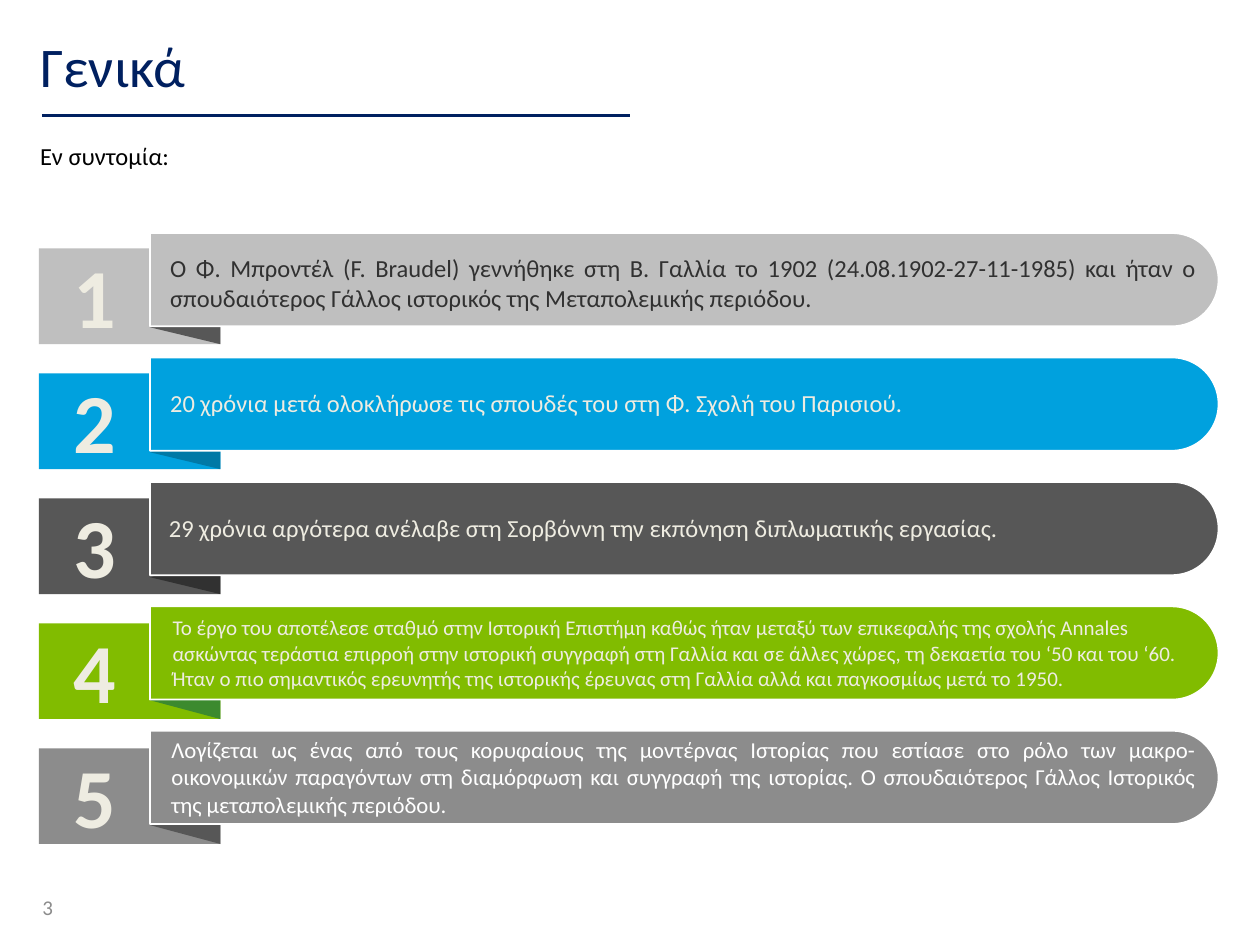
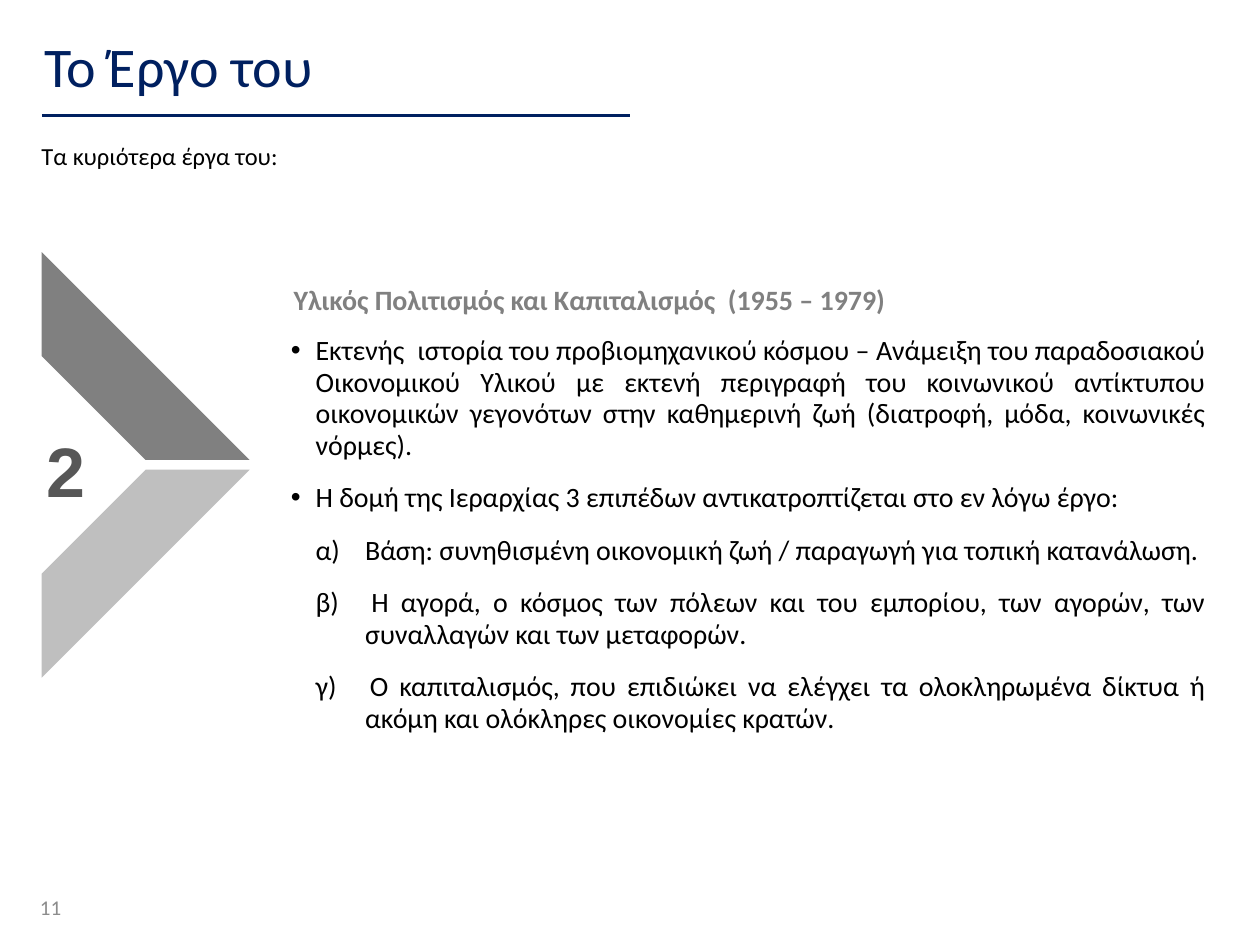
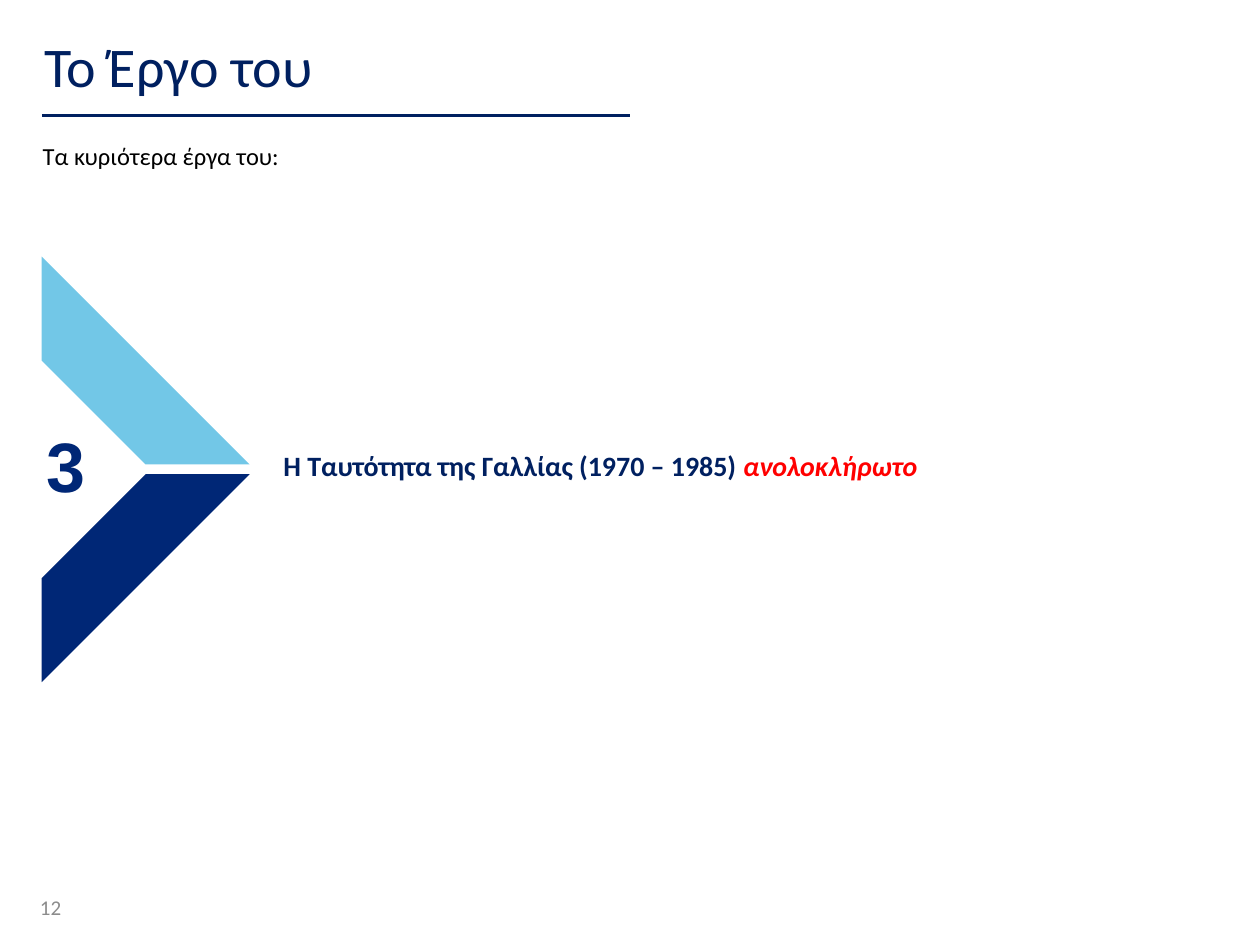
from dataclasses import dataclass

import lxml.etree
import pptx
import pptx.dml.color
import pptx.enum.shapes
import pptx.enum.text
import pptx.oxml.ns
import pptx.util

Pt = pptx.util.Pt
qn = pptx.oxml.ns.qn
SHAPE = pptx.enum.shapes.MSO_SHAPE
ALIGN = pptx.enum.text.PP_ALIGN
ANCHOR = pptx.enum.text.MSO_ANCHOR

FONT = "Calibri"
NAVY = "002060"
BLACK = "000000"
WHITE = "FFFFFF"
CREAM = "EEECE1"
CHARCOAL = "313131"
DARK_GRAY = "575757"
MID_GRAY = "808080"
SOFT_GRAY = "8C8C8C"
LIGHT_GRAY = "BFBFBF"
RED = "FF0000"

ROW_COUNT_TOP = 142
TAB_PITCH = 71.4
TAB_LEFT, TAB_W, TAB_H = 22.3, 103.7, 54.7
BAR_TOP, BAR_PITCH = 133.2, 71.1
BAR_LEFT, BAR_W, BAR_H = 85.7, 610.6, 53.3
FOLD_W = 40.3


@dataclass(frozen=True)
class Box:
    left: float
    top: float
    width: float
    height: float

    def emu(self) -> tuple:
        return tuple(Pt(v) for v in (self.left, self.top, self.width, self.height))

    def turned(self) -> "Box":
        """Frame that covers this box after a quarter turn."""
        shift = (self.width - self.height) / 2
        return Box(self.left + shift, self.top - shift, self.height, self.width)


@dataclass(frozen=True)
class Style:
    size: float
    color: str
    bold: bool = False
    italic: bool = False
    font: str = FONT


@dataclass(frozen=True)
class Fact:
    """One numbered ribbon; text_box is where its words stand."""
    text: str
    fill: str
    fold: str
    fold_h: float
    text_box: Box
    style: Style
    align: ALIGN = ALIGN.LEFT


@dataclass(frozen=True)
class Work:
    """The large arrow and number that introduce a book."""
    number: str
    top: float
    number_top: float
    upper: str
    lower: str
    number_color: str


@dataclass(frozen=True)
class Item:
    text: str
    margin: float
    hanging: float
    bullet: str = ""


BODY = Style(14, BLACK)
PAGE = Style(12, SOFT_GRAY)
LIST = Style(16, BLACK)

FACTS = [
    Fact("Ο Φ. Μπροντέλ (F. Braudel) γεννήθηκε στη Β. Γαλλία το 1902 "
         "(24.08.1902-27-11-1985) και ήταν ο σπουδαιότερος Γάλλος ιστορικός "
         "της Μεταπολεμικής περιόδου.",
         LIGHT_GRAY, DARK_GRAY, 19.4, Box(97.2, 144.7, 586.8, 34),
         Style(14, CHARCOAL), ALIGN.JUSTIFY),
    Fact("20 χρόνια μετά ολοκλήρωσε τις σπουδές του στη Φ. Σχολή του Παρισιού.",
         "00A1DE", "0079A6", 19.4, Box(97.2, 221.8, 500.4, 17), Style(14, CREAM)),
    Fact("29 χρόνια αργότερα ανέλαβε στη Σορβόννη την εκπόνηση διπλωματικής εργασίας.",
         DARK_GRAY, CHARCOAL, 19.4, Box(96.5, 293, 500.4, 17), Style(14, CREAM)),
    Fact("Το έργο του αποτέλεσε σταθμό στην Ιστορική Επιστήμη καθώς ήταν μεταξύ των "
         "επικεφαλής της σχολής Annales ασκώντας τεράστια επιρροή στην ιστορική "
         "συγγραφή στη Γαλλία και σε άλλες χώρες, τη δεκαετία του ‘50 και του ‘60. "
         "Ήταν ο πιο σημαντικός ερευνητής της ιστορικής έρευνας στη Γαλλία αλλά και "
         "παγκοσμίως μετά το 1950.",
         "81BC00", "3C8A2E", 21.6, Box(98.6, 351.4, 583, 44), Style(12, CREAM)),
    Fact("Λογίζεται ως ένας από τους κορυφαίους της μοντέρνας Ιστορίας που εστίασε στο "
         "ρόλο των μακρο- οικονομικών παραγόντων στη διαμόρφωση και συγγραφή της "
         "ιστορίας. Ο σπουδαιότερος Γάλλος Ιστορικός της μεταπολεμικής περιόδου.",
         SOFT_GRAY, DARK_GRAY, 21.6, Box(97.9, 420.5, 584.6, 47.5),
         Style(13, WHITE), ALIGN.JUSTIFY),
]

DETAILS = [
    Item("Εκτενής  ιστορία του προβιομηχανικού κόσμου – Ανάμειξη του παραδοσιακού "
         "Οικονομικού Υλικού με εκτενή περιγραφή του κοινωνικού αντίκτυπου οικονομικών "
         "γεγονότων στην καθημερινή ζωή (διατροφή, μόδα, κοινωνικές νόρμες).",
         14.2, 14.2, "•"),
    Item("Η δομή της Ιεραρχίας 3 επιπέδων αντικατροπτίζεται στο εν λόγω έργο:",
         14.2, 14.2, "•"),
    Item("α) \tΒάση: συνηθισμένη οικονομική ζωή / παραγωγή για τοπική κατανάλωση.",
         42.5, 28.3),
    Item("β) \tΗ αγορά, ο κόσμος των πόλεων και του εμπορίου, των αγορών, των "
         "συναλλαγών και των μεταφορών.", 42.5, 28.3),
    Item("γ) \tΟ καπιταλισμός, που επιδιώκει να ελέγχει τα ολοκληρωμένα δίκτυα ή "
         "ακόμη και ολόκληρες οικονομίες κρατών.", 42.5, 28.3),
]


def rgb(color: str):
    return pptx.dml.color.RGBColor.from_string(color)


def format_font(font, style: Style) -> None:
    font.name = style.font
    font.size = Pt(style.size)
    font.bold = style.bold
    font.italic = style.italic
    font.color.rgb = rgb(style.color)


def set_frame(tf, inset: float | None) -> None:
    """Wrap the text; None keeps the usual insets."""
    tf.word_wrap = True
    tf.auto_size = pptx.enum.text.MSO_AUTO_SIZE.NONE
    if inset is not None:
        tf.margin_left = tf.margin_right = tf.margin_top = tf.margin_bottom = Pt(inset)


def add_text(s, box: Box, text: str, style: Style, align=ALIGN.LEFT,
             inset: float | None = 0):
    tf = s.shapes.add_textbox(*box.emu()).text_frame
    set_frame(tf, inset)
    tf.text = text
    p = tf.paragraphs[0]
    p.alignment = align
    format_font(p.runs[0].font, style)
    return tf


def add_filled(s, kind, box: Box, fill: str, rotation: float = 0, line: str = ""):
    sp = s.shapes.add_shape(kind, *box.emu())
    sp.rotation = rotation
    sp.shadow.inherit = False
    sp.fill.solid()
    sp.fill.fore_color.rgb = rgb(fill)
    if line:
        sp.line.color.rgb = rgb(line)
        sp.line.width = Pt(1)
    else:
        sp.line.fill.background()
    return sp


def add_page(prs, title: str, title_left: float, intro: str, intro_left: float,
             page: str, page_w: float, page_align=ALIGN.LEFT):
    """Slide with its title, rule, introduction line and page number."""
    s = prs.slides.add_slide(prs.slide_layouts[5])
    sp = s.shapes.title
    sp.left, sp.top, sp.width, sp.height = Box(title_left, 18, 648, 38.2).emu()
    tf = sp.text_frame
    set_frame(tf, None)
    tf.vertical_anchor = ANCHOR.MIDDLE
    tf.text = title
    tf.paragraphs[0].alignment = ALIGN.LEFT
    format_font(tf.paragraphs[0].runs[0].font, Style(32, NAVY))

    rule = s.shapes.add_connector(pptx.enum.shapes.MSO_CONNECTOR.STRAIGHT,
                                  Pt(24), Pt(66), Pt(360), Pt(66))
    rule.line.color.rgb = rgb(NAVY)
    rule.line.width = Pt(2)
    lxml.etree.SubElement(rule._element.spPr, qn("a:effectLst"))

    tf = add_text(s, Box(intro_left, 77.8, 680, 24), intro, BODY, ALIGN.JUSTIFY, None)
    tf.paragraphs[0].line_spacing = Pt(16)
    tf = add_text(s, Box(15.8, 507.4, page_w, 22), page, PAGE, page_align, None)
    tf.vertical_anchor = ANCHOR.MIDDLE
    return s


def add_fact(s, index: int, fact: Fact) -> None:
    tab_top = ROW_COUNT_TOP + index * TAB_PITCH
    add_filled(s, SHAPE.RECTANGLE, Box(TAB_LEFT, tab_top, TAB_W, TAB_H), fact.fill)
    fold = Box(TAB_LEFT + TAB_W - FOLD_W, tab_top + TAB_H - fact.fold_h,
               FOLD_W, fact.fold_h)
    add_filled(s, SHAPE.ISOSCELES_TRIANGLE, fold.turned(), fact.fold, 270)
    bar = Box(BAR_LEFT, BAR_TOP + index * BAR_PITCH, BAR_W, BAR_H)
    sp = add_filled(s, SHAPE.ROUND_2_SAME_RECTANGLE, bar.turned(), fact.fill, 90, WHITE)
    sp.adjustments[0] = 0.5
    sp.adjustments[1] = 0
    add_text(s, Box(26.6, tab_top - 5.2, 54.7, 64), str(index + 1),
             Style(48, CREAM, bold=True), ALIGN.CENTER, 2.9)
    add_text(s, fact.text_box, fact.text, fact.style, fact.align)


def add_work(s, work: Work) -> None:
    side, pitch = 118.8, 124.4
    for i, (fill, turn) in enumerate([(work.upper, 270), (work.lower, 0)]):
        box = Box(23.8, work.top + i * pitch, side, side)
        add_filled(s, SHAPE.DIAGONAL_STRIPE, box, fill, turn)
    add_text(s, Box(23.8, work.number_top, 30.2, 54), work.number,
             Style(40, work.number_color, bold=True, font="Arial"), inset=2.9)


def add_list(s, box: Box, items: list[Item]) -> None:
    tf = s.shapes.add_textbox(*box.emu()).text_frame
    set_frame(tf, None)
    for i, item in enumerate(items):
        p = tf.add_paragraph() if i else tf.paragraphs[0]
        p.text = item.text
        p.alignment = ALIGN.JUSTIFY
        p.line_spacing = Pt(18)
        if i:
            p.space_before = Pt(12)
        pPr = p._p.get_or_add_pPr()
        pPr.set("marL", str(Pt(item.margin)))
        pPr.set("indent", str(-Pt(item.hanging)))
        if item.bullet:
            lxml.etree.SubElement(pPr, qn("a:buFont"), typeface="Arial")
            lxml.etree.SubElement(pPr, qn("a:buChar"), char=item.bullet)
        for r in p.runs:
            format_font(r.font, LIST)


def main() -> None:
    prs = pptx.Presentation()
    prs.slide_width, prs.slide_height = Pt(720), Pt(540)

    s = add_page(prs, "Γενικά", 15.8, "Εν συντομία:", 15.8, "3", 21.6, ALIGN.RIGHT)
    for i, fact in enumerate(FACTS):
        add_fact(s, i, fact)

    s = add_page(prs, "Το Έργο του", 18, "Τα κυριότερα έργα του:", 16.6, "11", 44)
    add_work(s, Work("2", 144, 241.2, MID_GRAY, LIGHT_GRAY, DARK_GRAY))
    add_text(s, Box(167.8, 161.3, 372.2, 19.4),
             "Υλικός Πολιτισμός και Καπιταλισμός  (1955 – 1979)",
             Style(16, MID_GRAY, bold=True))
    add_list(s, Box(159.1, 187.9, 537.1, 237.6), DETAILS)

    s = add_page(prs, "Το Έργο του", 18, "Τα κυριότερα έργα του:", 17.3, "12", 44)
    add_work(s, Work("3", 146.6, 238.3, "72C7E7", "002776", "002776"))
    tf = add_text(s, Box(162, 256.3, 468, 19.4),
                  "Η Ταυτότητα της Γαλλίας (1970 – 1985) ", Style(16, NAVY, bold=True))
    r = tf.paragraphs[0].add_run()
    r.text = "ανολοκλήρωτο"
    format_font(r.font, Style(16, RED, bold=True, italic=True))

    prs.save("out.pptx")


if __name__ == "__main__":
    main()
